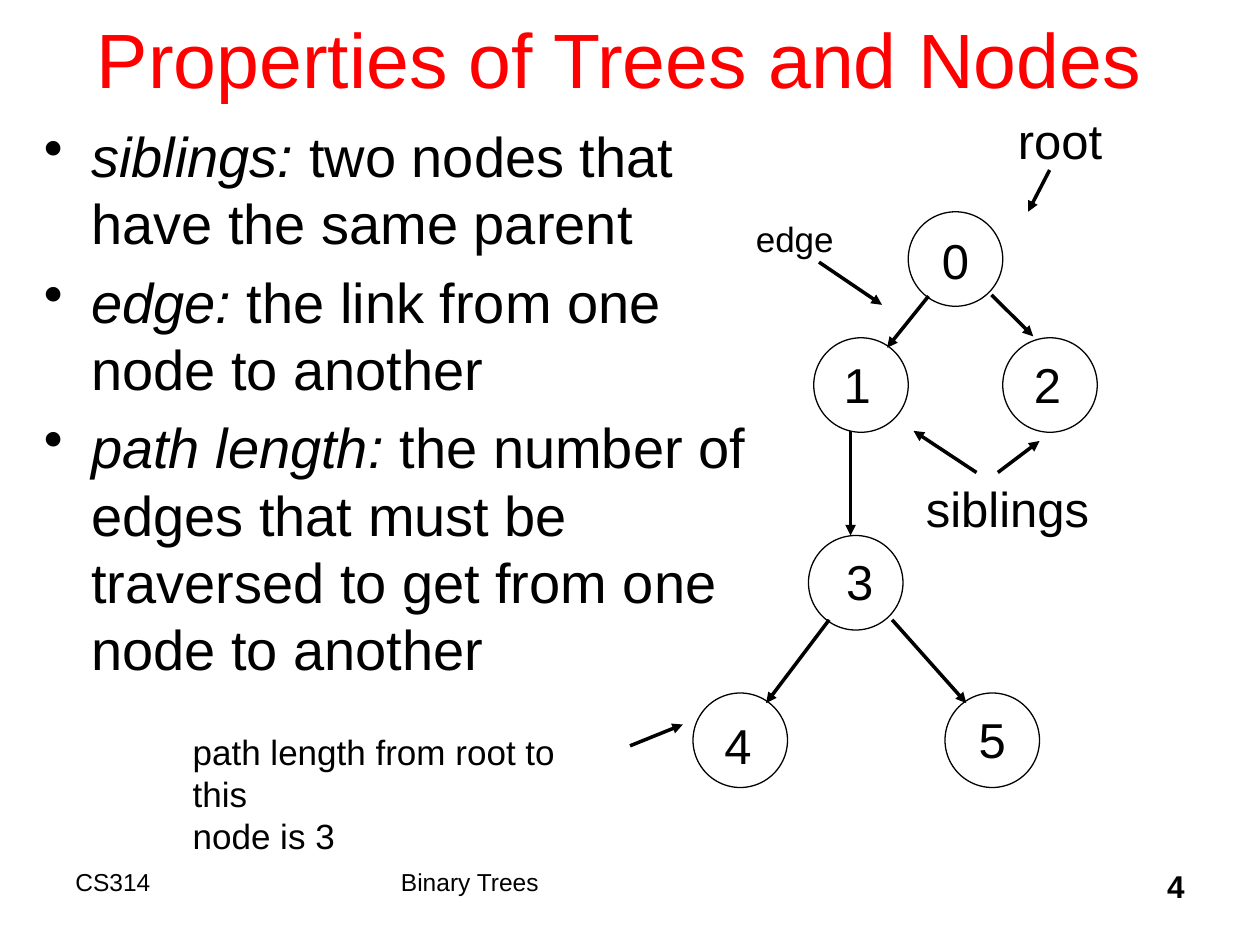
import pptx
import pptx.dml.color
import pptx.enum.shapes
import pptx.enum.text
import pptx.oxml
import pptx.oxml.ns
import pptx.util

Pt = pptx.util.Pt
ALIGN = pptx.enum.text.PP_ALIGN
ANCHOR = pptx.enum.text.MSO_ANCHOR
BLACK = "000000"
RED = "FF0000"
NODE = 54  # circle diameter

# Digit, circle offset in the tree box, digit offset in the circle
NODES = [
    ("0", 123, 0, 12.2, 7.2),
    ("1", 69, 72, 10, 5.8),
    ("2", 177, 72, 10.8, 5.8),
    ("3", 66, 185, 14.4, 5.8),
    ("4", 0, 275, 10.8, 9.4),
    ("5", 144, 275, 12.2, 5.8),
]
EDGES = [
    (134.6, 48.2, 110.9, 77.7),
    (170.6, 47.5, 194.4, 71.2),
    (90, 125.2, 90, 185),
    (77.8, 233.2, 41.8, 280.8),
    (113.8, 233.2, 156.2, 280.8),
]
# Label, box in the notes region, size, wrap
LABELS = [
    ("root", (471.6, 0, 62.6, 41), 28, False),
    ("siblings", (419, 210.2, 108, 41), 28, False),
    ("edge", (321.8, 61.2, 59, 31), 20, False),
    ("path length from root to this\nnode is 3", (0, 354.2, 257, 55.4), 20, True),
]
POINTERS = [
    (496.8, 37.4, 484.5, 61.2),
    (455, 210.2, 419, 186.4),
    (467.2, 210.2, 491, 192.2),
    (365, 90, 401, 114.4),
    (257, 366.4, 287.2, 354.2),
]
TERMS = [
    ("siblings:", " two nodes that have the same parent"),
    ("edge:", " the link from one node to another"),
    ("path length:", " the number of edges that must be traversed "
                     "to get from one node to another"),
]


def color(code):
    return pptx.dml.color.RGBColor.from_string(code)


def add_run(para, text, size, ink=BLACK, bold=False, slant=False):
    run = para.add_run()
    run.text = text
    font = run.font
    font.name, font.size = "Arial", Pt(size)
    font.bold, font.italic = bold, slant
    font.color.rgb = color(ink)


def add_frame(slide, box, wrap=True, anchor=ANCHOR.TOP):
    frame = slide.shapes.add_textbox(*map(Pt, box)).text_frame
    frame.word_wrap = wrap
    frame.vertical_anchor = anchor
    return frame


def add_text(slide, box, text, size, align=ALIGN.LEFT, wrap=True,
             anchor=ANCHOR.TOP, before=0, **style):
    para = add_frame(slide, box, wrap, anchor).paragraphs[0]
    para.alignment = align
    para.space_before = Pt(before)
    for i, line in enumerate(text.split("\n")):
        if i:
            para.add_line_break()
        add_run(para, line, size, **style)


def add_arrow(slide, left, top, ends):
    x1, y1, x2, y2 = ends
    arrow = slide.shapes.add_connector(
        pptx.enum.shapes.MSO_CONNECTOR.STRAIGHT,
        Pt(left + x1), Pt(top + y1), Pt(left + x2), Pt(top + y2))
    arrow.line.color.rgb = color(BLACK)
    arrow.line.width = Pt(2)
    head = pptx.oxml.parse_xml(
        f'<a:tailEnd {pptx.oxml.ns.nsdecls("a")} type="triangle"/>')
    arrow.line._get_or_add_ln().append(head)
    props = arrow._element.spPr
    props.append(pptx.oxml.parse_xml(
        f'<a:effectLst {pptx.oxml.ns.nsdecls("a")}/>'))


def add_terms(slide, box):
    frame = add_frame(slide, box)
    for i, (term, rest) in enumerate(TERMS):
        para = frame.add_paragraph() if i else frame.paragraphs[0]
        para.space_before = Pt(6.4)
        props = para._p.get_or_add_pPr()
        props.set("marL", str(Pt(27)))
        props.set("indent", str(-Pt(27)))
        props.append(pptx.oxml.parse_xml(
            f'<a:buChar {pptx.oxml.ns.nsdecls("a")} char="•"/>'))
        add_run(para, term, 32, slant=True)
        add_run(para, rest, 32)


def add_tree(slide, left, top):
    for digit, x, y, dx, dy in NODES:
        ring = slide.shapes.add_shape(
            pptx.enum.shapes.MSO_SHAPE.OVAL,
            Pt(left + x), Pt(top + y), Pt(NODE), Pt(NODE))
        ring.shadow.inherit = False
        ring.fill.background()
        ring.line.color.rgb = color(BLACK)
        ring.line.width = Pt(0.75)
        add_text(slide, (left + x + dx, top + y + dy, 30, 41), digit, 28,
                 wrap=False, before=5.6)
    for ends in EDGES:
        add_arrow(slide, left, top, ends)


def add_notes(slide, left, top):
    for text, (x, y, wide, high), size, wrap in LABELS:
        add_text(slide, (left + x, top + y, wide, high), text, size,
                 wrap=wrap, before=size / 5)
    for ends in POINTERS:
        add_arrow(slide, left, top, ends)


def add_footer(slide, left, top):
    add_text(slide, (left, top, 180, 36), "CS314", 14)
    add_text(slide, (left + 186, top, 276, 36), "Binary Trees", 14)
    add_text(slide, (left + 498, top, 150, 36), "4", 18,
             align=ALIGN.RIGHT, bold=True)


def main():
    deck = pptx.Presentation()
    deck.slide_width, deck.slide_height = Pt(720), Pt(540)
    slide = deck.slides.add_slide(deck.slide_layouts[6])
    # Title
    add_text(slide, (36, -12, 636, 90), "Properties of Trees and Nodes", 44,
             align=ALIGN.CENTER, anchor=ANCHOR.MIDDLE, ink=RED)
    # Definitions
    add_terms(slide, (18, 66, 432, 432))
    # Diagram with its labels
    add_tree(slide, 396, 121)
    add_notes(slide, 103, 59.8)
    # Footer
    add_footer(slide, 36, 492)
    deck.save("out.pptx")


if __name__ == "__main__":
    main()
